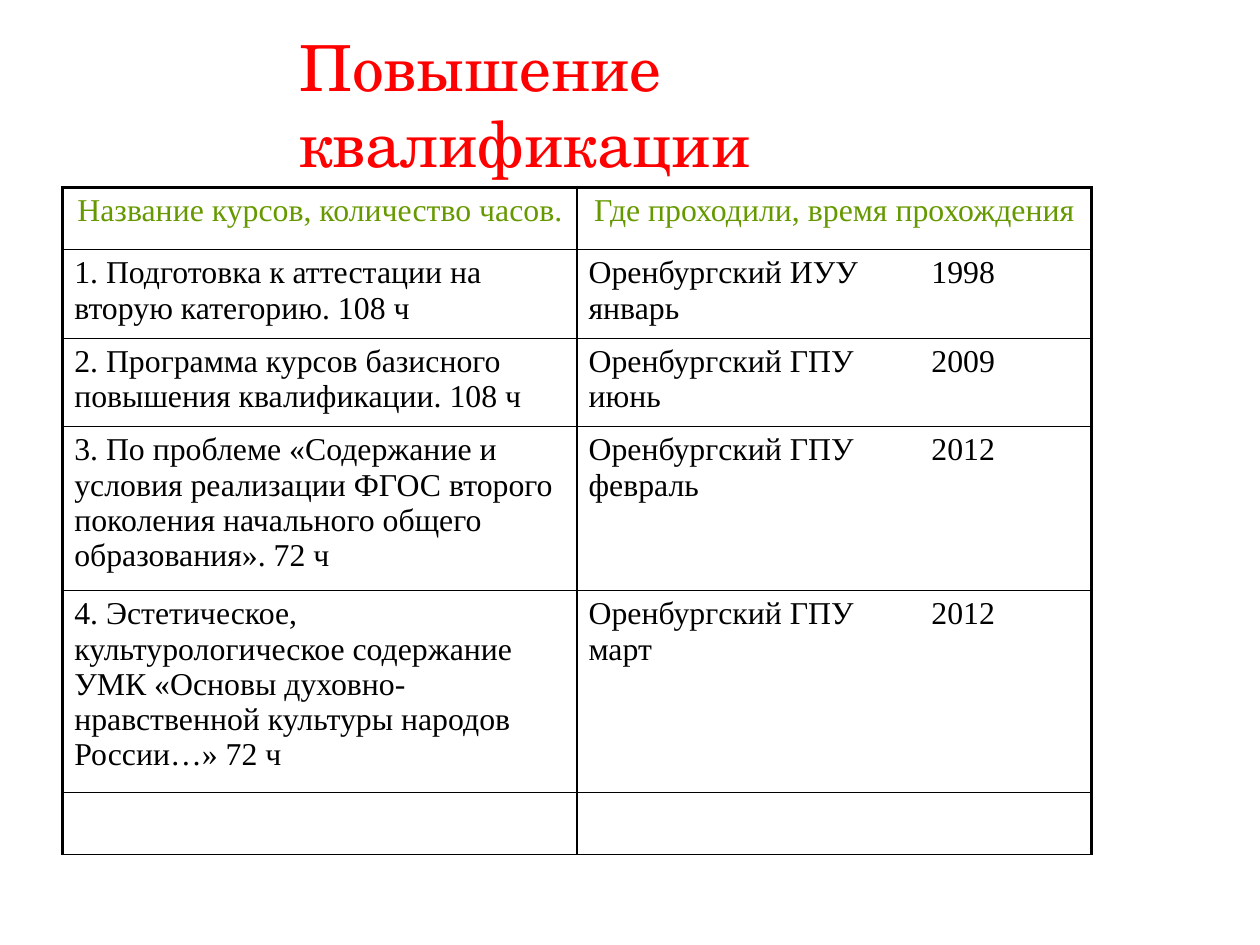
from lxml import etree
from pptx import Presentation
from pptx.dml.color import RGBColor
from pptx.enum.text import MSO_AUTO_SIZE as AutoSize, PP_ALIGN as Align
from pptx.oxml.ns import qn
from pptx.util import Pt

COLORS = {"title": "FF0000", "header": "669900", "text": "000000", "border": "000000"}
THIN, THICK = 1, 2.25


def write_text(frame, text, size=20, font="Times New Roman", color="text",
               align=Align.LEFT, tabs=()):
    paragraph = frame.paragraphs[0]
    paragraph.alignment = align
    if tabs:
        tab_list = etree.SubElement(paragraph._p.get_or_add_pPr(), qn("a:tabLst"))
        for position in tabs:
            etree.SubElement(tab_list, qn("a:tab"), pos=str(Pt(position)), algn="l")
    run = paragraph.add_run()
    run.text = text
    run.font.size = Pt(size)
    run.font.name = font
    run.font.color.rgb = RGBColor.from_string(COLORS[color])


def set_borders(cell, **widths):
    properties = cell._tc.get_or_add_tcPr()
    for index, (side, width) in enumerate(widths.items()):
        line = etree.Element(qn(f"a:ln{side}"), w=str(Pt(width)))
        fill = etree.SubElement(line, qn("a:solidFill"))
        etree.SubElement(fill, qn("a:srgbClr"), val=COLORS["border"])
        properties.insert(index, line)


presentation = Presentation()
presentation.slide_width = Pt(793.75)
presentation.slide_height = Pt(595.25)
slide = presentation.slides.add_slide(presentation.slide_layouts[6])

# Title
title = slide.shapes.add_textbox(Pt(181.5), Pt(14), Pt(396.7), Pt(104.4))
title.text_frame.word_wrap = True
title.text_frame.auto_size = AutoSize.SHAPE_TO_FIT_TEXT
write_text(title.text_frame, "Повышение квалификации", size=40,
           font="TeX Gyre Schola", color="title")

# Courses: row height, course name, place and time
courses = [
    (39.2, "Название курсов, количество часов.", "Где проходили, время прохождения"),
    (55.8, "1. Подготовка к аттестации на вторую категорию. 108 ч",
     "Оренбургский ИУУ\t1998\tянварь"),
    (55.8, "2. Программа курсов базисного повышения квалификации. 108 ч",
     "Оренбургский ГПУ\t2009\tиюнь"),
    (103, "3. По проблеме «Содержание и условия реализации ФГОС второго поколения "
          "начального общего образования». 72 ч",
     "Оренбургский ГПУ\t2012\tфевраль"),
    (127.3, "4. Эстетическое, культурологическое содержание УМК «Основы "
            "духовно-нравственной культуры народов России…» 72 ч",
     "Оренбургский ГПУ\t2012\tмарт"),
    (39, "", ""),
]

# Table
total_height = sum(height for height, *_ in courses)
table = slide.shapes.add_table(len(courses), 2, Pt(39.6), Pt(118.1),
                               Pt(648), Pt(total_height)).table
table.first_row = False
table.horz_banding = False
for row, (height, *texts) in enumerate(courses):
    table.rows[row].height = Pt(height)
    for column, text in enumerate(texts):
        cell = table.cell(row, column)
        cell.fill.background()
        set_borders(cell,
                    L=THICK if column == 0 else THIN,
                    R=THICK if column == 1 else THIN,
                    T=THICK if row == 0 else THIN,
                    B=THIN)
        if text:
            write_text(cell.text_frame, text,
                       color="header" if row == 0 else "text",
                       align=Align.CENTER if row == 0 else Align.LEFT,
                       tabs=(216, 288) if "\t" in text else ())

presentation.save("out.pptx")
